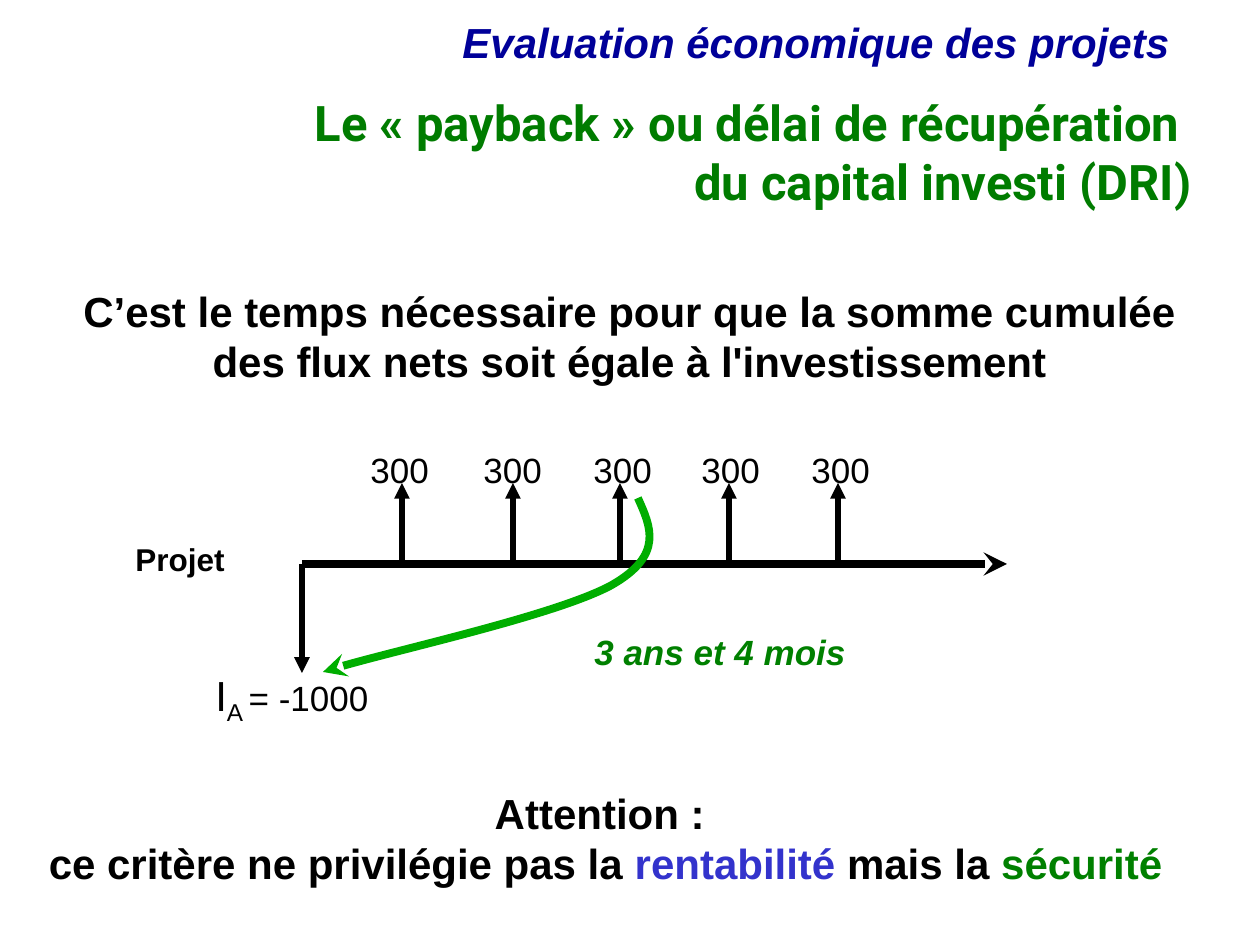
from lxml.etree import SubElement
from pptx import Presentation
from pptx.dml.color import RGBColor
from pptx.enum.shapes import MSO_CONNECTOR as Connector
from pptx.enum.text import MSO_ANCHOR as Anchor, MSO_AUTO_SIZE as AutoSize, PP_ALIGN as Align
from pptx.oxml.ns import qn
from pptx.util import Pt

EMU_PER_PX = 914400 / 126
BLACK, NAVY, BLUE = "000000", "000099", "3333CC"
GREEN, TITLE_GREEN, ARROW_GREEN = "008000", "007C00", "00AE00"


def px(length):
    return round(length * EMU_PER_PX)


def color(hex_string):
    return RGBColor.from_string(hex_string)


def write_text(shape, paragraphs, size=24, font="Arial", fill=BLACK, bold=False, italic=False,
               align=Align.LEFT, anchor=Anchor.TOP, wrap=True, line_spacing=None):
    """Each paragraph is a list of (text, overrides); the text "\\n" is a line break."""
    frame = shape.text_frame
    frame.word_wrap = wrap
    frame.auto_size = AutoSize.NONE
    frame.vertical_anchor = anchor
    for index, runs in enumerate(paragraphs):
        paragraph = frame.add_paragraph() if index else frame.paragraphs[0]
        paragraph.alignment = align
        paragraph.line_spacing = line_spacing
        for text, overrides in runs:
            if text == "\n":
                paragraph.add_line_break()
                continue
            run = paragraph.add_run()
            run.text = text
            run.font.name = font
            run.font.size = Pt(overrides.get("size", size))
            run.font.bold = bold
            run.font.italic = italic
            run.font.color.rgb = color(overrides.get("fill", fill))
            if "baseline" in overrides:
                run._r.get_or_add_rPr().set("baseline", str(overrides["baseline"] * 1000))


def add_text(slide, box, paragraphs, **text_format):
    if isinstance(paragraphs, str):
        paragraphs = [[(paragraphs, {})]]
    shape = slide.shapes.add_textbox(*map(px, box))
    write_text(shape, paragraphs, **text_format)


def style_line(shape, fill, width, arrowhead):
    shape.line.color.rgb = color(fill)
    shape.line.width = Pt(width)
    SubElement(shape.line._get_or_add_ln(), qn("a:tailEnd"), type=arrowhead)


def add_arrow(slide, start, end, width=3, arrowhead="triangle"):
    arrow = slide.shapes.add_connector(Connector.STRAIGHT, *map(px, start + end))
    style_line(arrow, BLACK, width, arrowhead)
    SubElement(arrow._element.spPr, qn("a:effectLst"))


def add_curved_arrow(slide, left, top, points):
    """The first point starts the curve; each three after it make one Bézier segment."""
    builder = slide.shapes.build_freeform(*points[0], scale=EMU_PER_PX)
    builder.add_line_segments(points[1:], close=False)
    curve = builder.convert_to_shape(px(left), px(top))
    segments = list(curve._element.iter(qn("a:lnTo")))
    for first in range(0, len(segments), 3):
        triple = segments[first:first + 3]
        bezier = SubElement(triple[0].getparent(), qn("a:cubicBezTo"))
        for segment in triple:
            bezier.append(segment[0])
            segment.getparent().remove(segment)
    curve.fill.background()
    curve.shadow.inherit = False
    style_line(curve, ARROW_GREEN, 4.5, "stealth")


def add_heading(slide, box):
    left, top, width, height = box
    add_text(slide, (left + 161, top, 1008, 58), "Evaluation économique des projets",
             fill=NAVY, bold=True, italic=True, align=Align.RIGHT, line_spacing=0.9)
    title = slide.shapes.title
    title.left, title.top, title.width, title.height = map(
        px, (left, top + 70, width, height - 70))
    write_text(title, [[("Le «\u00a0payback\u00a0» ou délai de récupération ", {}), ("\n", {}),
                        ("du capital investi (DRI)", {})]],
               size=28, font="Roboto", fill=TITLE_GREEN, bold=True, align=Align.RIGHT)


def add_cash_flow_timeline(slide, left, top):
    def at(x, y):
        return left + x, top + y

    axis_start = at(179, 122)
    add_arrow(slide, axis_start, at(179, 231))
    add_text(slide, at(80, 221) + (186, 63),
             [[("I", {}), ("A ", {"baseline": -25}), ("= -1000", {"size": 20})]], wrap=False)
    add_arrow(slide, axis_start, at(884, 122), width=4.5, arrowhead="stealth")
    add_text(slide, at(0, 92) + (159, 50), "Projet", size=18, bold=True)

    flow_and_label_x = [(279, 235), (390, 348), (497, 458), (606, 566), (715, 676)]
    for flow_x, label_x in flow_and_label_x:
        add_text(slide, at(label_x, 0) + (84, 55), "300", size=20, wrap=False)
        add_arrow(slide, at(flow_x, 120), at(flow_x, 41))

    add_curved_arrow(slide, left, top, [(515, 56), (528, 85), (541, 113), (489, 143),
                                        (436, 172), (247, 214), (200, 230)])
    add_text(slide, at(459, 187) + (278, 50), "3 ans et 4 mois", size=20, fill=GREEN,
             bold=True, italic=True, wrap=False, line_spacing=0.9)


def add_statement(slide, box, paragraphs):
    add_text(slide, box, paragraphs, bold=True, align=Align.CENTER, anchor=Anchor.MIDDLE)


def main():
    presentation = Presentation()
    presentation.slide_width, presentation.slide_height = px(1260), px(945)
    slide = presentation.slides.add_slide(presentation.slide_layouts[5])
    add_heading(slide, (13, 16, 1191, 201))
    add_statement(slide, (34, 278, 1191, 115),
                  "C’est le temps nécessaire pour que la somme cumulée "
                  "des flux nets soit égale à l'investissement")
    add_cash_flow_timeline(slide, 123, 442)
    add_statement(slide, (10, 780, 1191, 115), [
        [("Attention : ", {})],
        [("ce critère ne privilégie pas la ", {}), ("rentabilité", {"fill": BLUE}),
         (" mais la ", {}), ("sécurité", {"fill": GREEN})]])
    presentation.save("out.pptx")


if __name__ == "__main__":
    main()
